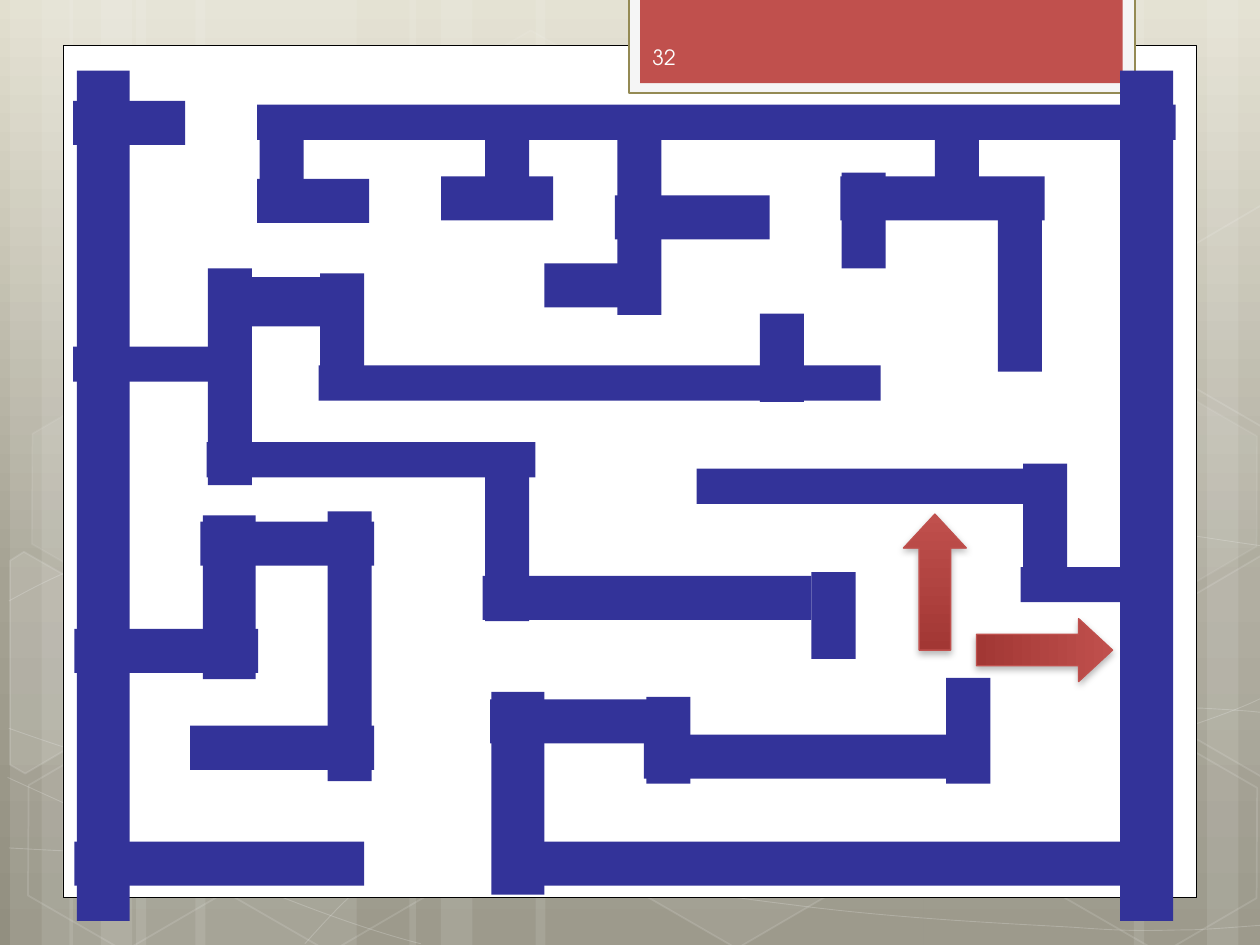
from copy import deepcopy
from dataclasses import dataclass
from typing import NamedTuple, Optional

from lxml import etree
from pptx import Presentation
from pptx import util as u
from pptx.dml.color import RGBColor
from pptx.enum import shapes as es, text as et
from pptx.oxml.ns import qn


@dataclass(frozen=True)
class Theme:
    sky: tuple = ((0, "E2DFCF"), (62, "A5A293"), (100, "928F80"))
    white: str = "FFFFFF"
    black: str = "000000"
    frame: str = "F5F5F5"
    olive: str = "948A54"
    red: str = "C0504D"
    dark: str = "A23734"
    wall: str = "333399"
    label: str = "FEFEFE"
    font: str = "TeX Gyre Adventor"
    size: int = 12


class Box(NamedTuple):
    x: float
    y: float
    w: float
    h: float


class Hex(NamedTuple):
    x: float
    y: float
    fill: Optional[int]
    edge: int


class Cut(NamedTuple):
    points: tuple
    fill: Optional[int]


T = Theme()
KIND = es.MSO_SHAPE

# Pale vertical bands: left edge and width
BANDS = ((1.08, 1.75), (0.08, 0.5), (0.33, 0.83), (1.55, 1.75), (0.55, 0.5), (0.8, 0.83),
         (7.33, 1.75), (9.58, 0.5), (9, 0.83), (4.25, 3.08), (3.25, 0.5), (3.5, 0.83))

# Thin curves: a start, then Bezier points in threes
CURVES = (
    ((0.07, 6.73), (0.61, 6.76), (1.15, 6.79), (1.9, 6.78), (2.65, 6.77), (3.58, 6.75),
     (4.58, 6.65), (5.58, 6.55), (7, 6.36), (7.92, 6.17), (8.83, 5.98), (9.77, 5.68), (10.07, 5.51)),
    ((0.07, 4.77), (0.36, 4.61), (0.65, 4.46), (1.21, 4.31), (1.78, 4.16), (2.59, 3.94),
     (3.47, 3.87), (4.36, 3.8), (5.44, 3.79), (6.54, 3.87), (7.64, 3.95), (9.47, 4.26), (10.07, 4.34)),
    ((0.06, 6.17), (1.27, 6.72), (2.47, 7.27), (3.34, 7.49)),
    ((0.07, 5.78), (0.38, 5.89), (0.7, 6), (1.28, 6.16), (1.86, 6.31), (2.73, 6.56),
     (3.57, 6.73), (4.4, 6.9), (5.45, 7.08), (6.28, 7.18), (7.11, 7.29), (8, 7.33), (8.53, 7.36),
     (9.05, 7.4), (9.19, 7.38), (9.45, 7.38), (9.71, 7.37), (9.89, 7.35), (10.07, 7.34)),
    ((2.42, 7.49), (2.6, 7.29), (2.78, 7.09), (3.02, 6.91), (3.26, 6.73), (3.6, 6.53),
     (3.88, 6.39), (4.16, 6.25), (4.33, 6.19), (4.7, 6.09), (5.06, 5.99), (5.73, 5.85),
     (6.08, 5.78), (6.44, 5.71), (6.49, 5.71), (6.8, 5.69), (7.11, 5.66), (7.6, 5.63),
     (7.94, 5.62), (8.29, 5.61), (8.86, 5.62), (8.86, 5.62), (8.86, 5.62), (9.53, 5.62),
     (9.53, 5.62), (9.71, 5.63), (9.88, 5.64), (9.97, 5.65), (10.06, 5.66), (10.03, 5.65),
     (10.06, 5.66)),
)

# Honeycomb: whole cells, then cells cut by the slide edge
CELLS = (Hex(3.34, 0.36, 4, 8), Hex(4.97, 5.89, 6, 12), Hex(0.11, 5.91, None, 12),
         Hex(0.14, 3.12, 7, 8), Hex(1.74, 5.92, None, 12), Hex(7.53, 4.53, 10, 12),
         Hex(8.34, 5.93, None, 12), Hex(8.34, 3.14, 7, 8))
CUTS = (
    Cut(((0.08, 4.45), (0.19, 4.38), (0.96, 4.82), (0.95, 5.7), (0.2, 6.14), (0.08, 6.07)), 10),
    Cut(((9.26, 4.85), (10.01, 4.41), (10.09, 4.46), (10.09, 6.13), (10.02, 6.17), (9.26, 5.73)), 4),
    Cut(((9.26, 2.07), (10.01, 1.63), (10.1, 1.68), (10.09, 3.35), (10.02, 3.39), (9.26, 2.95)), None),
)

# Maze walls by thickness: level (left, top, length), upright (left, top, length)
LEVEL = {
    0.28: ((2.53, 2.9, 4.46), (5.53, 3.72, 2.76), (2.04, 0.83, 7.29), (0.58, 2.75, 1.38),
           (1.64, 3.51, 2.61), (8.1, 4.5, 1.15)),
    0.35: ((0.59, 6.68, 2.3), (3.83, 4.57, 2.61), (0.59, 4.99, 1.46), (1.59, 4.14, 1.38),
           (6.67, 1.4, 1.62), (1.51, 5.76, 1.46), (3.89, 5.55, 1.53), (4.12, 6.68, 5.14),
           (4.32, 2.09, 0.89), (5.11, 5.83, 2.61), (4.88, 1.55, 1.23), (3.5, 1.4, 0.89),
           (2.04, 1.42, 0.89), (0.58, 0.8, 0.89)),
    0.39: ((1.74, 2.2, 1.12),),
}
UPRIGHT = {
    0.35: ((6.44, 4.54, 0.69), (7.51, 5.38, 0.84), (6.68, 1.37, 0.76), (2.54, 2.17, 0.97),
           (1.65, 2.13, 1.72), (3.85, 3.67, 1.26), (2.6, 4.06, 2.14), (2.06, 0.92, 0.69),
           (7.42, 0.92, 0.65), (7.92, 1.56, 1.39), (5.13, 5.53, 0.69), (8.12, 3.68, 0.99),
           (6.03, 2.49, 0.7), (4.9, 0.95, 1.55), (3.85, 1.06, 0.65)),
    0.42: ((0.61, 0.56, 6.75), (8.89, 0.56, 6.75), (1.61, 4.09, 1.3), (3.9, 5.49, 1.61)),
}


def fade(part, alpha: int) -> None:
    """Make the solid colour of a fill or line see-through."""
    tone = next(part.iter(qn("a:srgbClr")))
    etree.SubElement(tone, qn("a:alpha")).set("val", str(alpha * 1000))


def paint(shape, fill=None, edge=None, width=0.5, alpha=100, glow=100):
    """Set fill and line; alpha and glow are their opacity in percent."""
    shape.shadow.inherit = False
    props = shape._element.spPr
    for tag, side, tone, clear in (("a:solidFill", shape.fill, fill, alpha),
                                   ("a:ln", shape.line.fill, edge, glow)):
        if tone is None:
            side.background()
            continue
        side.solid()
        side.fore_color.rgb = RGBColor.from_string(tone)
        if clear < 100:
            fade(props.find(qn(tag)), clear)
    if edge:
        shape.line.width = u.Pt(width)
    return shape


def block(slide, box: Box, kind=KIND.RECTANGLE, **look):
    shape = slide.shapes.add_shape(kind, *map(u.Inches, box))
    return paint(shape, **look)


def trace(slide, points, close: bool, **look):
    """Outline through points given in inches."""
    first, *rest = [(round(x * 100), round(y * 100)) for x, y in points]
    pen = slide.shapes.build_freeform(*first, scale=u.Inches(0.01))
    pen.add_line_segments(rest, close=close)
    return paint(pen.convert_to_shape(), **look)


def bend(shape) -> None:
    """Turn each three straight steps of an outline into one cubic curve."""
    steps = list(shape._element.spPr.iter(qn("a:lnTo")))
    for i in range(0, len(steps), 3):
        curve = etree.Element(qn("a:cubicBezTo"))
        steps[i].addprevious(curve)
        for step in steps[i:i + 3]:
            curve.append(step[0])
            step.getparent().remove(step)


def blend(fill, stops) -> None:
    """Linear gradient from top to bottom."""
    fill.gradient()
    fill.gradient_angle = 270
    marks = fill._fill._gradFill.find(qn("a:gsLst"))
    while len(marks) < len(stops):
        marks.append(deepcopy(marks[0]))
    for mark, (place, tone) in zip(fill.gradient_stops, stops):
        mark.position = place / 100
        mark.color.rgb = RGBColor.from_string(tone)


def arrow(slide, box: Box, turn: int) -> None:
    shape = block(slide, box, KIND.UP_ARROW, fill=T.red, edge=T.red, width=0.75)
    shape.rotation = turn
    shape.adjustments[0], shape.adjustments[1] = 0.5, 0.54
    blend(shape.fill, ((0, T.red), (100, T.dark)))
    glow = shape._element.spPr.find(qn("a:effectLst"))
    cast = etree.SubElement(glow, qn("a:outerShdw"), blurRad=str(u.Pt(4)), dist=str(u.Pt(2)),
                            dir="5400000", rotWithShape="0")
    etree.SubElement(cast, qn("a:srgbClr"), val=T.black)
    fade(cast, 28)


def number(slide, box: Box, words: str) -> None:
    frame = slide.shapes.add_textbox(*map(u.Inches, box)).text_frame
    for key, val in {"word_wrap": True, "vertical_anchor": et.MSO_ANCHOR.MIDDLE}.items():
        setattr(frame, key, val)
    run = frame.paragraphs[0].add_run()
    run.text = words
    for key, val in {"name": T.font, "size": u.Pt(T.size)}.items():
        setattr(run.font, key, val)
    run.font.color.rgb = RGBColor.from_string(T.label)


def main() -> None:
    deck = Presentation()
    deck.slide_width, deck.slide_height = u.Inches(10), u.Inches(7.5)
    slide = deck.slides.add_slide(deck.slide_layouts[6])

    # Backdrop
    blend(slide.background.fill, T.sky)
    for x, w in BANDS:
        block(slide, Box(x, 0, w, 7.5), fill=T.white, alpha=10)
    for knots in CURVES:
        bend(trace(slide, knots, False, edge=T.white, glow=20))
    for cell in CELLS:
        shape = block(slide, Box(cell.x, cell.y, 1.75, 1.52), KIND.HEXAGON, edge=T.white, width=1,
                      fill=T.white if cell.fill else None, alpha=cell.fill or 100, glow=cell.edge)
        shape.rotation = 30
        shape.adjustments[0] = 0.285
    for cut in CUTS:
        trace(slide, cut.points, True, fill=T.white if cut.fill else None, alpha=cut.fill or 100,
              edge=T.white, width=1, glow=12)

    # Panel and number tab
    block(slide, Box(0.5, 0.36, 9, 6.76), fill=T.white, edge=T.black)
    block(slide, Box(4.99, -0.02, 4.02, 0.76), fill=T.frame, edge=T.olive, width=1.25)
    block(slide, Box(5.08, -0.02, 3.83, 0.68), fill=T.red)
    number(slide, Box(5.08, 0.25, 1.46, 0.4), "32")

    # Maze
    walls = [Box(x, y, n, thick) for thick, rows in LEVEL.items() for x, y, n in rows]
    walls += [Box(x, y, thick, n) for thick, rows in UPRIGHT.items() for x, y, n in rows]
    for wall in walls:
        block(slide, wall, fill=T.wall)

    # Way out
    arrow(slide, Box(8.04, 4.62, 0.5, 1.08), 90)
    arrow(slide, Box(7.17, 4.08, 0.5, 1.08), 0)

    deck.save("out.pptx")


if __name__ == "__main__":
    main()
